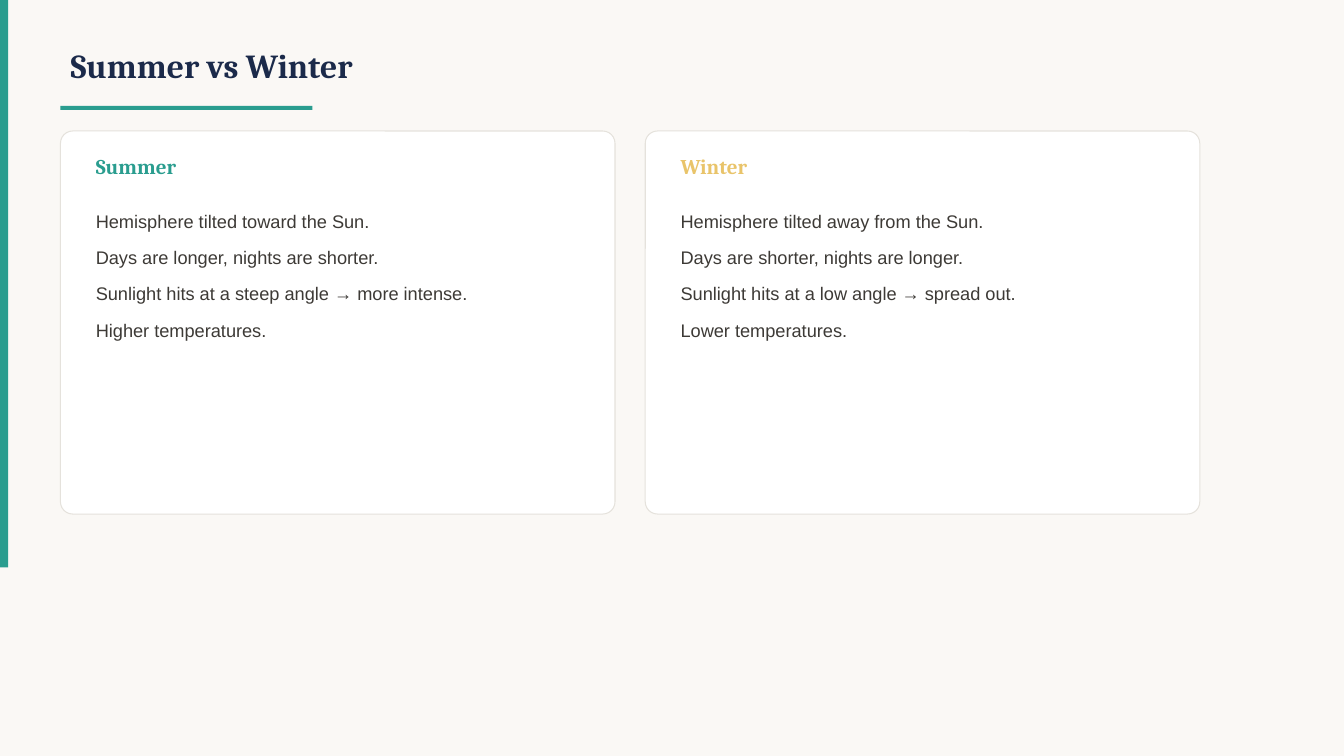
from dataclasses import dataclass

from pptx import Presentation
from pptx import util as u
from pptx.dml.color import RGBColor
from pptx.enum import shapes, text
from pptx.oxml.ns import qn


@dataclass(frozen=True)
class Theme:
    """Colours, fonts, type sizes and grid cell of the deck."""
    paper: str = "FAF8F5"
    card: str = "FFFFFF"
    edge: str = "E5E2DC"
    navy: str = "1B2A4A"
    teal: str = "2A9D8F"
    gold: str = "E9C46A"
    ink: str = "3D3A36"
    serif: str = "Cambria"
    sans: str = "Arial"
    title: int = 24
    head: int = 15
    body: int = 13
    cell: float = 0.1


class Deck:
    """Draws elements on one slide, measured in grid columns and rows."""

    def __init__(self, theme):
        """Open a comparison slide with a plain background."""
        self.theme = theme
        self.prs = Presentation()
        self.prs.slide_width, self.prs.slide_height = u.Inches(13.33), u.Inches(7.5)
        self.slide = self.prs.slides.add_slide(self.prs.slide_layouts[4])
        self.paint(self.slide.background.fill, theme.paper)

    def paint(self, fill, color):
        """Make a fill solid in one colour."""
        fill.solid()
        fill.fore_color.rgb = RGBColor.from_string(color)

    def grid(self, *cells):
        """Turn grid cells into lengths."""
        return [u.Inches(n * self.theme.cell) for n in cells]

    def block(self, box, color, kind=shapes.MSO_SHAPE.RECTANGLE):
        """Add a filled shape without an outline."""
        shape = self.slide.shapes.add_shape(kind, *self.grid(*box))
        shape.shadow.inherit = False
        self.paint(shape.fill, color)
        shape.line.fill.background()
        return shape

    def card(self, box):
        """Add a rounded card with a thin edge."""
        card = self.block(box, self.theme.card, shapes.MSO_SHAPE.ROUNDED_RECTANGLE)
        card.adjustments[0] = 0.032
        self.paint(card.line.fill, self.theme.edge)
        card.line.width = u.Pt(0.75)

    def holder(self, key, box, anchor):
        """Place a template placeholder on top and return its text frame."""
        holder = next(h for h in self.slide.placeholders
                      if h.placeholder_format.idx == key)
        holder.left, holder.top, holder.width, holder.height = self.grid(*box)
        self.slide.shapes.element.append(holder.element)
        frame = holder.text_frame
        frame.auto_size = text.MSO_AUTO_SIZE.NONE
        frame.word_wrap = True
        frame.vertical_anchor = anchor
        return frame

    def say(self, para, words, face, size, color, bold=False):
        """Add one styled run to a left-aligned paragraph."""
        para.alignment = text.PP_ALIGN.LEFT
        para.space_before = u.Pt(0)
        run = para.add_run()
        run.text = words
        run.font.name, run.font.size, run.font.bold = face, u.Pt(size), bold
        run.font.color.rgb = RGBColor.from_string(color)

    def head(self, key, box, words, size, color):
        """Set a bold serif heading."""
        frame = self.holder(key, box, text.MSO_ANCHOR.MIDDLE)
        self.say(frame.paragraphs[0], words, self.theme.serif, size, color, True)

    def body(self, key, box, lines):
        """Set a list without bullet marks."""
        frame = self.holder(key, box, text.MSO_ANCHOR.TOP)
        for i, line in enumerate(lines):
            para = frame.add_paragraph() if i else frame.paragraphs[0]
            props = para._p.get_or_add_pPr()
            props.set("marL", "0")
            props.set("indent", "0")
            props.append(props.makeelement(qn("a:buNone"), {}))
            para.line_spacing = 1.4
            para.space_after = u.Pt(4)
            self.say(para, line, self.theme.sans, self.theme.body, self.theme.ink)


def main():
    """Build and save the season comparison."""
    theme = Theme()
    deck = Deck(theme)
    left, top, wide, gap, pad = 6, 13, 55, 3, 2.5
    deck.block((0, 0, 0.8, 56.3), theme.teal)
    deck.head(0, (left, 3, 100, 7), "Summer vs Winter", theme.title, theme.navy)
    deck.block((left, 10.5, 25, 0.4), theme.teal)
    seasons = [
        ("Summer", theme.teal, [
            "Hemisphere tilted toward the Sun.",
            "Days are longer, nights are shorter.",
            "Sunlight hits at a steep angle → more intense.",
            "Higher temperatures."]),
        ("Winter", theme.gold, [
            "Hemisphere tilted away from the Sun.",
            "Days are shorter, nights are longer.",
            "Sunlight hits at a low angle → spread out.",
            "Lower temperatures."]),
    ]
    for i, (name, color, lines) in enumerate(seasons):
        x = left + i * (wide + gap)
        deck.card((x, top, wide, 38))
        inner = wide - 2 * pad
        deck.head(2 * i + 1, (x + pad, top + 1.5, inner, 4), name, theme.head, color)
        deck.body(2 * i + 2, (x + pad, top + 6.5, inner, 29), lines)
    deck.prs.save("out.pptx")


if __name__ == "__main__":
    main()
